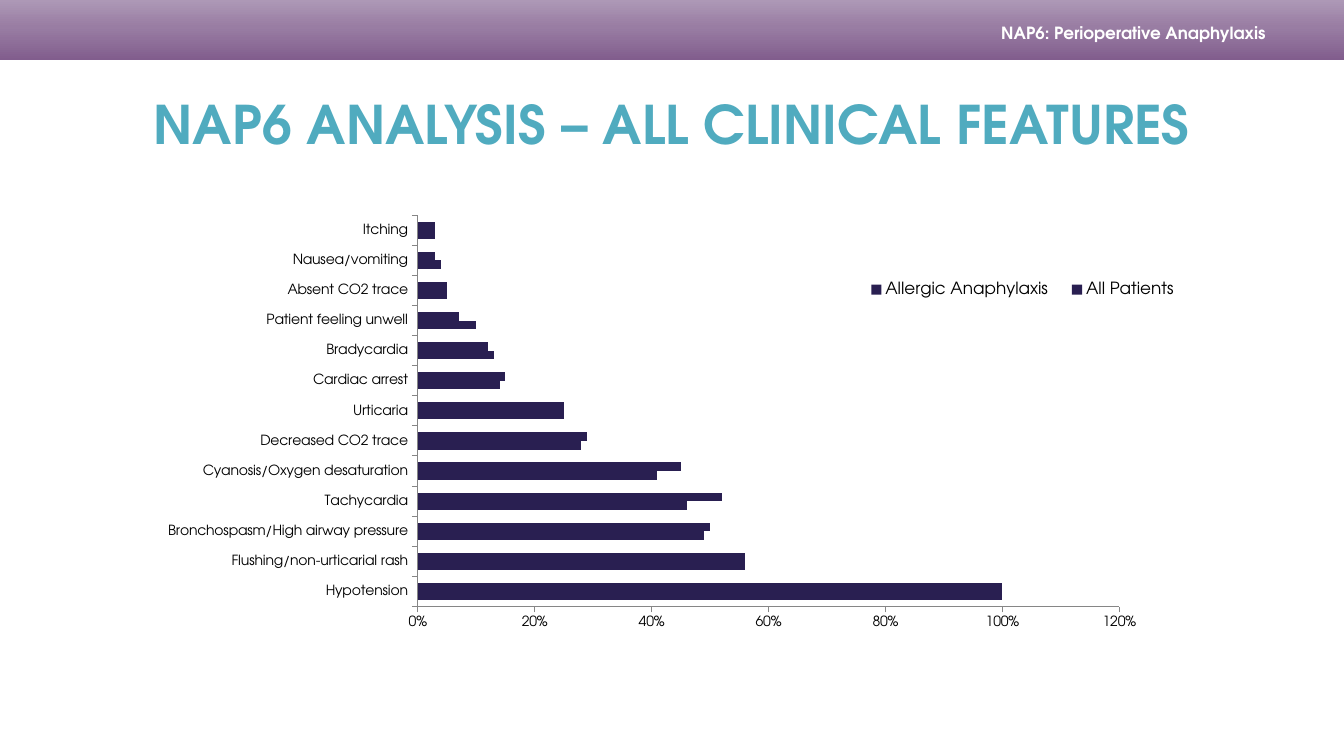
import copy
from dataclasses import dataclass

import pptx
import pptx.chart.data
import pptx.dml.color
import pptx.enum.chart
import pptx.enum.text
import pptx.oxml
import pptx.oxml.ns
import pptx.util
from pptx.util import Cm


@dataclass(frozen=True)
class Theme:
    font: str = "TeX Gyre Adventor"
    title: str = "50ABBF"
    header_text: str = "FFFFFF"
    header_stops: tuple = ((0, "815D8D"), (0.55, "997DA3"), (1, "AD98B6"))
    bar: str = "291F51"
    axis: str = "868686"
    text: str = "000000"
    title_size: int = 38
    header_size: int = 12
    legend_size: int = 12
    chart_size: int = 10


THEME = Theme()

# Feature, share of all patients, share with allergic anaphylaxis
FEATURES = [
    ("Hypotension", 1, 1),
    ("Flushing/non-urticarial rash", 0.56, 0.56),
    ("Bronchospasm/High airway pressure", 0.49, 0.5),
    ("Tachycardia", 0.46, 0.52),
    ("Cyanosis/Oxygen desaturation", 0.41, 0.45),
    ("Decreased CO2 trace", 0.28, 0.29),
    ("Urticaria", 0.25, 0.25),
    ("Cardiac arrest", 0.14, 0.15),
    ("Bradycardia", 0.13, 0.12),
    ("Patient feeling unwell", 0.1, 0.07),
    ("Absent CO2 trace", 0.05, 0.05),
    ("Nausea/vomiting", 0.04, 0.03),
    ("Itching", 0.03, 0.03),
]


def rgb(value):
    return pptx.dml.color.RGBColor.from_string(value)


def style_font(font, size, color, bold=False):
    font.name = THEME.font
    font.size = pptx.util.Pt(size)
    font.bold = bold
    font.color.rgb = rgb(color)


def write_line(frame, text, size, color, alignment):
    frame.word_wrap = True
    frame.vertical_anchor = pptx.enum.text.MSO_ANCHOR.MIDDLE
    frame.text = text
    paragraph = frame.paragraphs[0]
    paragraph.alignment = alignment
    style_font(paragraph.font, size, color, bold=True)


def add_header(page, width, text):
    band = page.shapes.add_shape(
        pptx.enum.shapes.MSO_SHAPE.RECTANGLE, 0, 0, width, Cm(1.52))
    band.shadow.inherit = False
    band.line.fill.background()
    band.fill.gradient()
    band.fill.gradient_angle = 90
    first_stop = band.fill._fill._gradFill.gsLst[0]
    first_stop.addnext(copy.deepcopy(first_stop))
    for stop, (position, color) in zip(band.fill.gradient_stops, THEME.header_stops):
        stop.position = position
        stop.color.rgb = rgb(color)

    box = page.shapes.add_textbox(Cm(21.21), Cm(0.46), Cm(11.3), Cm(0.71))
    box.text_frame.margin_right = Cm(0.61)
    write_line(box.text_frame, text, THEME.header_size, THEME.header_text,
               pptx.enum.text.PP_ALIGN.RIGHT)


def add_title(page, text):
    title = page.shapes.title
    title.left, title.top, title.width, title.height = (
        Cm(1.69), Cm(1.52), Cm(30.48), Cm(3.18))
    write_line(title.text_frame, text, THEME.title_size, THEME.title,
               pptx.enum.text.PP_ALIGN.CENTER)


def set_layout(parent, before, x, y, w, h, inner=False):
    """Fix a chart part's place, in fractions of the chart, ahead of the named child tags."""
    for old in parent.findall(pptx.oxml.ns.qn("c:layout")):
        parent.remove(old)
    target = '<c:layoutTarget val="inner"/>' if inner else ""
    sizes = "".join(f'<c:{name} val="{value}"/>'
                    for name, value in zip("xywh", (x, y, w, h)))
    layout = pptx.oxml.parse_xml(
        f'<c:layout {pptx.oxml.ns.nsdecls("c")}><c:manualLayout>{target}'
        '<c:xMode val="edge"/><c:yMode val="edge"/>'
        f'{sizes}</c:manualLayout></c:layout>')
    parent.find(pptx.oxml.ns.qn(before)).addprevious(layout)


def style_axis(axis):
    axis.has_major_gridlines = False
    axis.major_tick_mark = pptx.enum.chart.XL_TICK_MARK.OUTSIDE
    axis.format.line.color.rgb = rgb(THEME.axis)
    axis.format.line.width = pptx.util.Pt(0.75)


def add_feature_chart(page):
    names, all_patients, allergic = zip(*FEATURES)
    data = pptx.chart.data.CategoryChartData(number_format="0%")
    data.categories = names
    data.add_series("All Patients", all_patients)
    data.add_series("Allergic Anaphylaxis", allergic)
    chart = page.shapes.add_chart(
        pptx.enum.chart.XL_CHART_TYPE.BAR_CLUSTERED,
        Cm(1.69), Cm(5.21), Cm(30.48), Cm(10.72), data).chart
    chart.has_title = False
    style_font(chart.font, THEME.chart_size, THEME.text)

    plot = chart.plots[0]
    plot.gap_width = 150
    plot.vary_by_categories = False
    for series in plot.series:
        series.format.fill.solid()
        series.format.fill.fore_color.rgb = rgb(THEME.bar)

    style_axis(chart.category_axis)
    style_axis(chart.value_axis)
    chart.value_axis.minimum_scale = 0
    chart.value_axis.maximum_scale = 1.2
    chart.value_axis.major_unit = 0.2
    chart.value_axis.tick_labels.number_format = "0%"
    chart.value_axis.tick_labels.number_format_is_linked = False
    plot_area = chart._chartSpace.chart.plotArea
    set_layout(plot_area, "c:barChart", 0.29, 0.02, 0.58, 0.92, inner=True)

    chart.has_legend = True
    chart.legend.position = pptx.enum.chart.XL_LEGEND_POSITION.RIGHT
    chart.legend.include_in_layout = False
    style_font(chart.legend.font, THEME.legend_size, THEME.text)
    set_layout(chart.legend._element, "c:overlay", 0.65, 0.15, 0.28, 0.09)


def main():
    deck = pptx.Presentation()
    deck.slide_width, deck.slide_height = Cm(33.87), Cm(19.05)
    title_only = deck.slide_layouts[5]
    page = deck.slides.add_slide(title_only)
    add_header(page, deck.slide_width, "NAP6: Perioperative Anaphylaxis")
    add_title(page, "NAP6 ANALYSIS – ALL CLINICAL FEATURES")
    add_feature_chart(page)
    deck.save("out.pptx")


if __name__ == "__main__":
    main()
